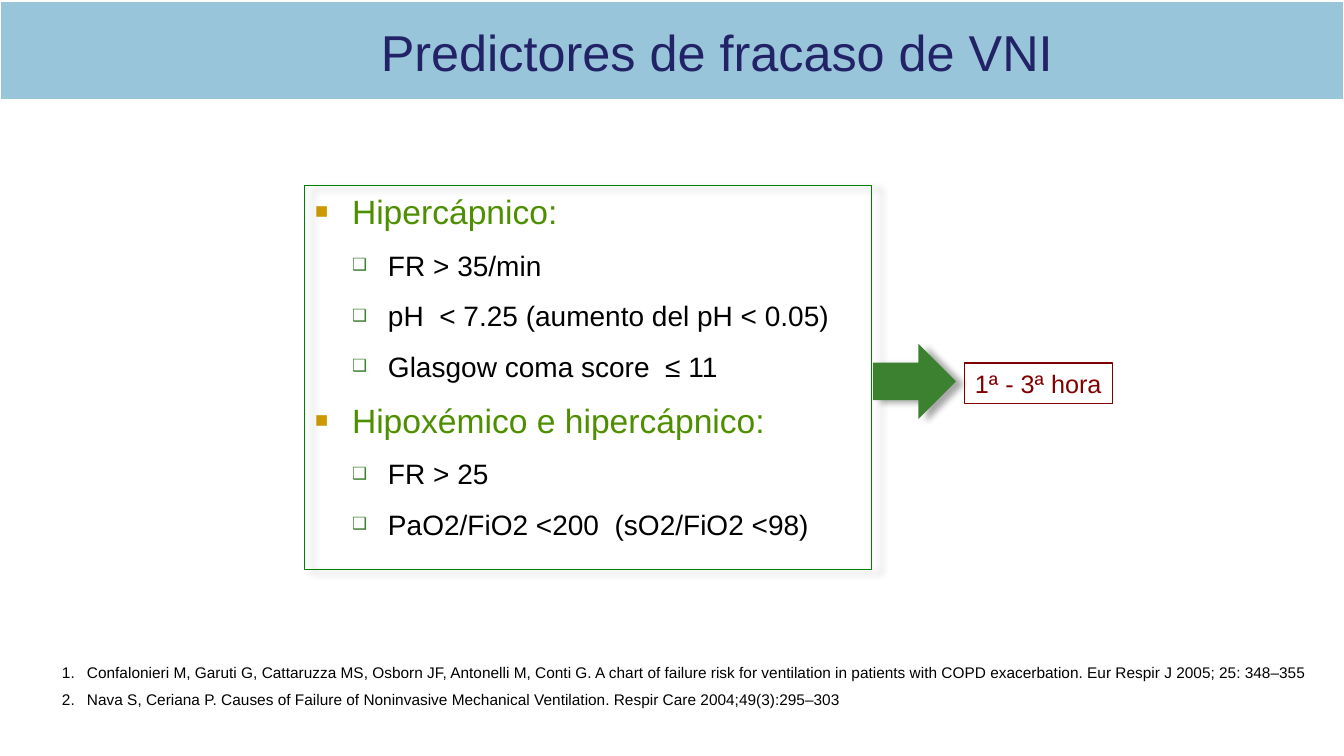
from lxml import etree
from pptx import Presentation
from pptx.dml.color import RGBColor
from pptx.enum.shapes import MSO_SHAPE
from pptx.enum.text import MSO_ANCHOR, MSO_AUTO_SIZE, PP_ALIGN
from pptx.oxml.ns import qn
from pptx.util import Pt

RECTANGLE, RIGHT_ARROW = MSO_SHAPE.RECTANGLE, MSO_SHAPE.RIGHT_ARROW
MIDDLE, TOP = MSO_ANCHOR.MIDDLE, MSO_ANCHOR.TOP
NO_FIT = MSO_AUTO_SIZE.NONE
CENTER, LEFT = PP_ALIGN.CENTER, PP_ALIGN.LEFT

# Content
TITLE = "Predictores de fracaso de VNI"
PREDICTORS = [
    ("Hipercápnico:", [
        "FR > 35/min",
        "pH  < 7.25 (aumento del pH < 0.05)",
        "Glasgow coma score  ≤ 11",
    ]),
    ("Hipoxémico e hipercápnico:", [
        "FR > 25",
        "PaO2/FiO2 <200  (sO2/FiO2 <98)",
    ]),
]
TIME_WINDOW = "1ª - 3ª hora"
REFERENCES = [
    "Confalonieri M, Garuti G, Cattaruzza MS, Osborn JF, Antonelli M, Conti G. "
    "A chart of failure risk for ventilation in patients with COPD exacerbation. "
    "Eur Respir J 2005; 25: 348–355",
    "Nava S, Ceriana P. Causes of Failure of Noninvasive Mechanical Ventilation. "
    "Respir Care 2004;49(3):295–303",
]

# Places in px: left, top, width, height
SLIDE_SIZE = (1344, 756)
BAND = (0, 1, 1344, 99)
TITLE_BOX = (304, 31, 826, 53)
LIST_BOX = (305, 186, 826, 374)
FRAME = (305, 186, 567, 384)
ARROW = (873, 344, 83, 75)
TIME_BOX = (965, 363, 148, 41)
REFERENCE_BOX = (52, 658, 1270, 56)

# Formats: size, colour, spacing in points; margin and hanging in px
HEADING = dict(size=24, color="4E8F00", before=6, after=6, margin=37, hanging=37,
               bullet=("■", "CC9900", 65))
ITEM = dict(size=20, color="000000", before=6, after=6, margin=73, hanging=36,
            bullet=("❑", "3B812F", 60))
REFERENCE = dict(size=11, color="000000", before=0, after=6, margin=25, hanging=25,
                 bullet=(None, "000000", 100))
TITLE_FORMAT = dict(size=36, color="222267", spacing=0.8, align=CENTER)
TIME_FORMAT = dict(size=18, color="800000")


def px(length):
    return round(length * 914400 / 100.8)


def rgb(value):
    return RGBColor.from_string(value)


def place(shape, box):
    for name, length in zip(("left", "top", "width", "height"), box):
        setattr(shape, name, px(length))


def add_child(parent, tag, **attributes):
    child = etree.SubElement(parent, qn(tag))
    for name, value in attributes.items():
        child.set(name, str(value))
    return child


def add_bullet(paragraph, character, color, percent):
    properties = paragraph._p.get_or_add_pPr()
    add_child(add_child(properties, "a:buClr"), "a:srgbClr", val=color)
    add_child(properties, "a:buSzPct", val=percent * 1000)
    add_child(properties, "a:buFont", typeface="Arial")
    if character:
        add_child(properties, "a:buChar", char=character)
    else:
        add_child(properties, "a:buAutoNum", type="arabicPeriod")


def write(frame, lines, anchor=TOP, wrap=True):
    """Fill a text frame with (text, level, format) lines."""
    frame_format = dict(word_wrap=wrap, auto_size=NO_FIT, vertical_anchor=anchor,
                        margin_left=px(10), margin_right=px(10),
                        margin_top=px(5), margin_bottom=px(5))
    for name, value in frame_format.items():
        setattr(frame, name, value)
    for index, (text, level, style) in enumerate(lines):
        paragraph = frame.add_paragraph() if index else frame.paragraphs[0]
        if "bullet" in style:
            add_bullet(paragraph, *style["bullet"])
            properties = paragraph._p.get_or_add_pPr()
            properties.set("marL", str(px(style["margin"])))
            properties.set("indent", str(-px(style["hanging"])))
        paragraph_format = dict(level=level, alignment=style.get("align", LEFT),
                                line_spacing=style.get("spacing", 1.0),
                                space_before=Pt(style.get("before", 0) if index else 0),
                                space_after=Pt(style.get("after", 0)))
        for name, value in paragraph_format.items():
            setattr(paragraph, name, value)
        run = paragraph.add_run()
        run.text = text
        run.font.name, run.font.size = "Arial", Pt(style["size"])
        run.font.color.rgb = rgb(style["color"])


def add_box(slide, kind, box, fill=None, line=None, line_width=0.75, shadow=False):
    shape = slide.shapes.add_shape(kind, *map(px, box))
    shape.shadow.inherit = False
    if fill:
        shape.fill.solid()
        shape.fill.fore_color.rgb = rgb(fill)
    else:
        shape.fill.background()
    if line:
        shape.line.color.rgb = rgb(line)
        shape.line.width = Pt(line_width)
    else:
        shape.line.fill.background()
    if shadow:
        effects = shape._element.spPr.find(qn("a:effectLst"))
        outer = add_child(effects, "a:outerShdw", blurRad=Pt(5), dist=Pt(6),
                          dir=18 * 60000, algn="ctr", rotWithShape=0)
        add_child(add_child(outer, "a:srgbClr", val="000000"), "a:alpha", val=35000)
    return shape


def main():
    presentation = Presentation()
    presentation.slide_width, presentation.slide_height = map(px, SLIDE_SIZE)
    slide = presentation.slides.add_slide(presentation.slide_layouts[1])

    # Title on its band, the band sent to the back
    band = add_box(slide, RECTANGLE, BAND, fill="99C5DA", line="FFFFFF", line_width=2)
    band._element.getparent().insert(2, band._element)
    title = slide.shapes.title
    place(title, TITLE_BOX)
    write(title.text_frame, [(TITLE, 0, TITLE_FORMAT)], anchor=MIDDLE)

    # Framed list of predictors
    lines = []
    for heading, items in PREDICTORS:
        lines.append((heading, 0, HEADING))
        lines += [(item, 1, ITEM) for item in items]
    body = slide.placeholders[1]
    place(body, LIST_BOX)
    write(body.text_frame, lines)
    add_box(slide, RECTANGLE, FRAME, line="008000", shadow=True)

    # Arrow to the time window
    add_box(slide, RIGHT_ARROW, ARROW, fill="3B812F", shadow=True)
    time_box = add_box(slide, RECTANGLE, TIME_BOX, line="800000")
    write(time_box.text_frame, [(TIME_WINDOW, 0, TIME_FORMAT)], wrap=False)

    # References
    references = slide.shapes.add_textbox(*map(px, REFERENCE_BOX))
    write(references.text_frame, [(text, 0, REFERENCE) for text in REFERENCES])

    presentation.save("out.pptx")


if __name__ == "__main__":
    main()
